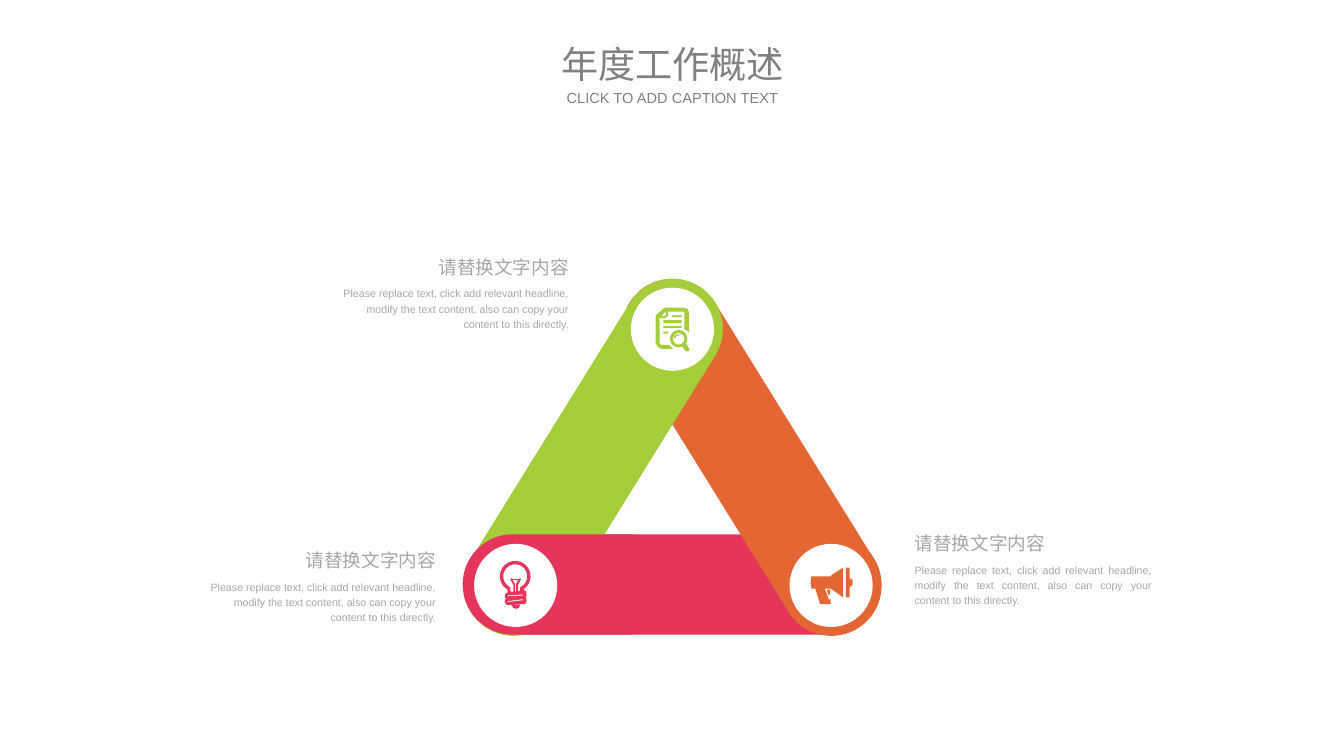
import math

from pptx import Presentation
from pptx import util as u
from pptx.dml.color import RGBColor
from pptx.enum import shapes, text

PX = 9144  # EMU per px, 100 px to the inch
FINE = 10  # freeform units per px

COLORS = {
    "green": "A3CD39",
    "orange": "E46633",
    "red": "E5355B",
    "white": "FFFFFF",
    "title": "808080",
    "caption": "A6A6A6",
}
FONT = "Arial"
HEADING = "请替换文字内容"
BODY = ("Please replace text, click add relevant headline, modify the text "
        "content, also can copy your content to this directly.")


def px(*values):
    return [u.Emu(v * PX) for v in values]


def arc(cx, cy, r, start=0, end=360, steps=48):
    """Points on a circle, clockwise, angles in degrees from the right."""
    angles = [math.radians(start + (end - start) * i / steps) for i in range(steps + 1)]
    return [(cx + r * math.cos(a), cy + r * math.sin(a)) for a in angles]


def bar(left, top, right, bottom):
    return [(left, top), (right, top), (right, bottom), (left, bottom)]


DOCUMENT = [
    [(696, 322), (715, 322), (719, 323), (721, 327), (721, 349), (720, 347),
     (716, 344), (716, 327), (715, 326), (698, 326), (699, 327), (699, 330),
     (697, 332), (695, 333), (690, 333), (690, 359), (692, 361), (700, 361),
     (704, 365), (692, 365), (688, 363), (686, 359), (686, 330), (695, 322)],
    [(696, 326), (692, 331), (695, 331), (697, 329)],
    bar(703, 330, 713, 332),
    bar(694, 335, 713, 338),
    bar(694, 341, 713, 343),
    bar(694, 347, 699, 349),
    arc(710, 354.5, 9),
    arc(710, 354.5, 6),
    [(706, 355), (707, 352), (713, 350), (708, 350), (705, 352)],
    [(714, 363), (717, 367), (719, 368), (721, 367), (721, 365), (718, 360)],
]
BULB = [
    arc(539, 603, 16, 121, 416) + [
        (548, 618), (550, 618), (551, 622), (550, 625), (551, 628), (550, 631),
        (549, 632), (530, 633), (528, 630), (529, 626), (528, 624), (529, 621),
        (531, 620)],
    arc(539, 603, 12.5, 115, 425) + [
        (544, 618), (542, 619), (542, 612), (545, 606), (544, 605), (543, 606),
        (536, 606), (535, 605), (534, 606), (537, 612), (537, 619), (534, 619)],
    [(542, 607), (536, 607), (539, 611), (539, 619), (540, 619), (540, 611)],
    [(547, 622), (531, 623), (531, 624), (547, 623)],
    [(547, 627), (531, 629), (531, 630), (547, 628)],
    [(544, 633), (535, 633), (537, 636), (540, 637), (543, 636)],
]
MEGAPHONE = [
    [(849, 603), (869, 603), (871, 601), (882, 594), (882, 625), (871, 617),
     (869, 616), (863, 616), (867, 627), (869, 627), (869, 632), (858, 632),
     (853, 616), (849, 616), (848, 610)],
    [(889, 605), (892, 607), (892, 612), (889, 614), (889, 625), (885, 625),
     (885, 594), (889, 594)],
    [(869, 617), (865, 617), (867, 623), (868, 623), (868, 621)],
]


def paint(sp, color):
    sp.fill.solid()
    sp.fill.fore_color.rgb = RGBColor.from_string(COLORS[color])
    sp.line.fill.background()
    sp.shadow.inherit = False


def add_band(slide, box, color, rotation=0):
    sp = slide.shapes.add_shape(shapes.MSO_SHAPE.ROUNDED_RECTANGLE, *px(*box))
    sp.adjustments[0] = 0.5
    sp.rotation = rotation
    paint(sp, color)


def add_disc(slide, left, top, size=87):
    sp = slide.shapes.add_shape(shapes.MSO_SHAPE.OVAL, *px(left, top, size, size))
    paint(sp, "white")


def add_icon(slide, contours, color):
    outlines = [[(x * FINE, y * FINE) for x, y in c] for c in contours]
    builder = slide.shapes.build_freeform(*outlines[0][0], scale=PX / FINE)
    for i, points in enumerate(outlines):
        if i:
            builder.move_to(*points[0])
        builder.add_line_segments(points[1:], close=True)
    paint(builder.convert_to_shape(), color)


def write(sp, words, size, color, align, spacing=None):
    tf = sp.text_frame
    tf.text = words
    tf.word_wrap = True
    tf.auto_size = text.MSO_AUTO_SIZE.SHAPE_TO_FIT_TEXT
    p = tf.paragraphs[0]
    p.alignment = align
    p.line_spacing = spacing
    font = p.runs[0].font
    font.name, font.size = FONT, u.Pt(size)
    font.color.rgb = RGBColor.from_string(COLORS[color])


def add_caption(slide, left, top, width, heading_align, body_align):
    """Heading with its body text 35 px below."""
    for words, size, dy, height, align in (
            (HEADING, 14, 0, 36, heading_align), (BODY, 8, 35, 57, body_align)):
        sp = slide.shapes.add_textbox(*px(left, top + dy, width, height))
        write(sp, words, size, "caption", align, 1.2)


def place_title(sp, words, size, top, height):
    sp.left, sp.top, sp.width, sp.height = px(577, top, 253, height)
    write(sp, words, size, "title", text.PP_ALIGN.CENTER)
    tf = sp.text_frame
    tf.vertical_anchor = text.MSO_ANCHOR.MIDDLE
    tf.margin_left = tf.margin_top = tf.margin_right = tf.margin_bottom = 0


def main():
    prs = Presentation()
    prs.slide_width, prs.slide_height = px(1406, 791)
    slide = prs.slides.add_slide(prs.slide_layouts[5])

    place_title(slide.shapes.title, "年度工作概述", 28, 42, 49)
    subtitle = slide.shapes.add_textbox(0, 0, 0, 0)
    place_title(subtitle, "CLICK TO ADD CAPTION TEXT", 11, 93, 19)

    add_band(slide, (486, 559, 436, 105), "red")
    add_band(slide, (576, 426, 421, 105), "orange", 58.2)
    add_band(slide, (410, 426, 421, 105), "green", -58.2)
    # Covers the lower end of the green band, so the bands interlock
    add_band(slide, (484, 559, 225, 105), "red")

    for left, top in ((660, 301), (496, 569), (826, 569)):
        add_disc(slide, left, top)
    add_icon(slide, DOCUMENT, "green")
    add_icon(slide, BULB, "red")
    add_icon(slide, MEGAPHONE, "orange")

    al = text.PP_ALIGN
    add_caption(slide, 947, 547, 268, al.LEFT, al.JUSTIFY)
    add_caption(slide, 346, 258, 259, al.RIGHT, al.RIGHT)
    add_caption(slide, 207, 565, 259, al.RIGHT, al.RIGHT)

    prs.save("out.pptx")


if __name__ == "__main__":
    main()
